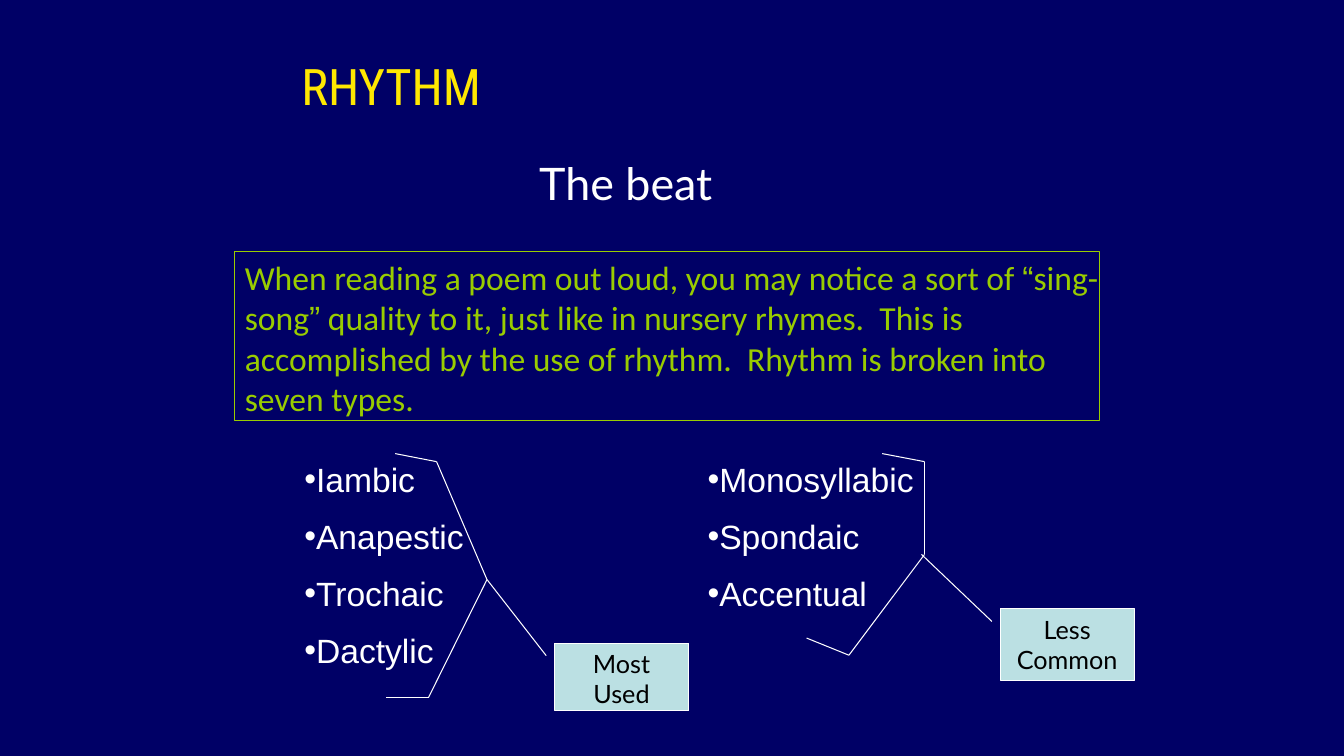
from dataclasses import dataclass
from itertools import pairwise

import pptx
import pptx.util
import pptx.dml.color
import pptx.enum.shapes
import pptx.enum.text
import pptx.oxml.ns
from lxml import etree

Inches, Pt = pptx.util.Inches, pptx.util.Pt
RGB = pptx.dml.color.RGBColor.from_string
SHAPE = pptx.enum.shapes.MSO_SHAPE
ALIGN = pptx.enum.text.PP_ALIGN
FIT = pptx.enum.text.MSO_AUTO_SIZE
TOP = pptx.enum.text.MSO_ANCHOR.TOP
qn = pptx.oxml.ns.qn


@dataclass(frozen=True)
class Theme:
    background: str = "000066"
    title_start: str = "FFE701"
    title_end: str = "FE3E02"
    white: str = "FFFFFF"
    black: str = "000000"
    green: str = "99CC00"
    label_fill: str = "BBE0E3"
    title_font: str = "Roboto Condensed"
    label_font: str = "Lato"
    body_font: str = "Calibri"
    list_font: str = "Arial"
    title_size: int = 36
    subtitle_size: int = 32
    body_size: int = 24
    label_size: int = 18
    line_width: float = 0.75


T = Theme()


def inches(box):
    return [Inches(v) for v in box]


def add_run(p, text, font, size, color=None):
    r = p.add_run()
    r.text = text
    r.font.name = font
    r.font.size = Pt(size)
    if color:
        r.font.color.rgb = RGB(color)
    return r


def set_line(line, color):
    line.color.rgb = RGB(color)
    line.width = Pt(T.line_width)


def space_paragraph(p, bullet=None):
    pPr = p._p.get_or_add_pPr()
    spacing = etree.SubElement(pPr, qn("a:spcBef"))
    etree.SubElement(spacing, qn("a:spcPct"), val="50000")
    if bullet:
        pPr.set("marL", "0")
        pPr.set("indent", "0")
        etree.SubElement(pPr, qn("a:buFont"), typeface=T.list_font)
        etree.SubElement(pPr, qn("a:buChar"), char=bullet)


def add_text(s, box, paragraphs, size, color, bullet=None):
    tf = s.shapes.add_textbox(*inches(box)).text_frame
    tf.word_wrap = True
    tf.auto_size = FIT.SHAPE_TO_FIT_TEXT
    for i, runs in enumerate(paragraphs):
        p = tf.add_paragraph() if i else tf.paragraphs[0]
        space_paragraph(p, bullet)
        for text, font in runs:
            add_run(p, text, font, size, color)


def add_title(s, box, text):
    sp = s.shapes.title
    sp.left, sp.top, sp.width, sp.height = inches(box)
    tf = sp.text_frame
    tf.word_wrap = False
    tf.auto_size = FIT.NONE
    tf.vertical_anchor = TOP
    p = tf.paragraphs[0]
    p.alignment = ALIGN.CENTER
    fill = add_run(p, text, T.title_font, T.title_size).font.fill
    fill.gradient()
    fill.gradient_angle = 270
    for stop, color in zip(fill.gradient_stops, (T.title_start, T.title_end)):
        stop.color.rgb = RGB(color)


def add_definition(s, box, runs):
    left, top, width, height = box
    add_text(s, (left, top, width + 0.09, 1.31), [runs], T.body_size, T.green)
    sp = s.shapes.add_shape(SHAPE.RECTANGLE, *inches(box))
    sp.shadow.inherit = False
    sp.fill.background()
    set_line(sp.line, T.green)


def add_label(s, box, tip, lines):
    left, top, width, height = box
    sp = s.shapes.add_shape(SHAPE.LINE_CALLOUT_1, *inches(box))
    sp.shadow.inherit = False
    sp.fill.solid()
    sp.fill.fore_color.rgb = RGB(T.label_fill)
    set_line(sp.line, T.white)
    ends = (0.125 / height, -0.062, (tip[1] - top) / height, (tip[0] - left) / width)
    for i, value in enumerate(ends):
        sp.adjustments[i] = value
    tf = sp.text_frame
    tf.vertical_anchor = TOP
    for i, text in enumerate(lines):
        p = tf.add_paragraph() if i else tf.paragraphs[0]
        p.alignment = ALIGN.CENTER
        add_run(p, text, T.label_font, T.label_size, T.black)


def add_bracket(s, points):
    for start, end in pairwise(points):
        c = s.shapes.add_connector(
            pptx.enum.shapes.MSO_CONNECTOR.STRAIGHT, *inches(start + end))
        set_line(c.line, T.white)
        etree.SubElement(c._element.spPr, qn("a:effectLst"))


def add_type_group(s, box, types, bracket, label_box, tip, label):
    left, top = box[:2]

    def place(x, y):
        return left + x, top + y

    add_text(s, box, [[(name, T.list_font)] for name in types],
             T.body_size, T.white, "•")
    add_label(s, place(*label_box[:2]) + label_box[2:], place(*tip), label)
    add_bracket(s, [place(*point) for point in bracket])


def main():
    prs = pptx.Presentation()
    prs.slide_width, prs.slide_height = Inches(13.33), Inches(7.5)
    s = prs.slides.add_slide(prs.slide_layouts[5])
    s.background.fill.solid()
    s.background.fill.fore_color.rgb = RGB(T.background)

    add_title(s, (2.17, 0.5, 3.42, 1.25), "RHYTHM")
    add_text(s, (5.25, 1.5, 5.5, 0.63), [[("The beat", T.label_font)]],
             T.subtitle_size, T.white)
    add_definition(s, (2.33, 2.5, 8.58, 1.67), [
        ("When reading a poem out loud, you may notice a sort of ", T.body_font),
        ("“", T.list_font),
        ("sing-song", T.body_font),
        ("”", T.list_font),
        (" quality to it, just like in nursery rhymes.  This is accomplished by "
         "the use of rhythm.  Rhythm is broken into seven types.", T.body_font),
    ])
    add_type_group(
        s, (6.92, 4.5, 2.42, 1.72), ("Monosyllabic", "Spondaic", "Accentual"),
        [(1.83, 0), (2.25, 0.08), (2.25, 1), (1.5, 2), (1.08, 1.83)],
        (3, 1.54, 1.33, 0.71), (2.22, 1), ("Less", "Common"))
    add_type_group(
        s, (2.92, 4.5, 2.25, 2.32), ("Iambic", "Anapestic", "Trochaic", "Dactylic"),
        [(1, 0), (1.41, 0.08), (1.91, 1.25), (1.33, 2.42), (0.91, 2.42)],
        (2.58, 1.88, 1.33, 0.67), (1.91, 1.25), ("Most", "Used"))
    prs.save("out.pptx")


if __name__ == "__main__":
    main()
